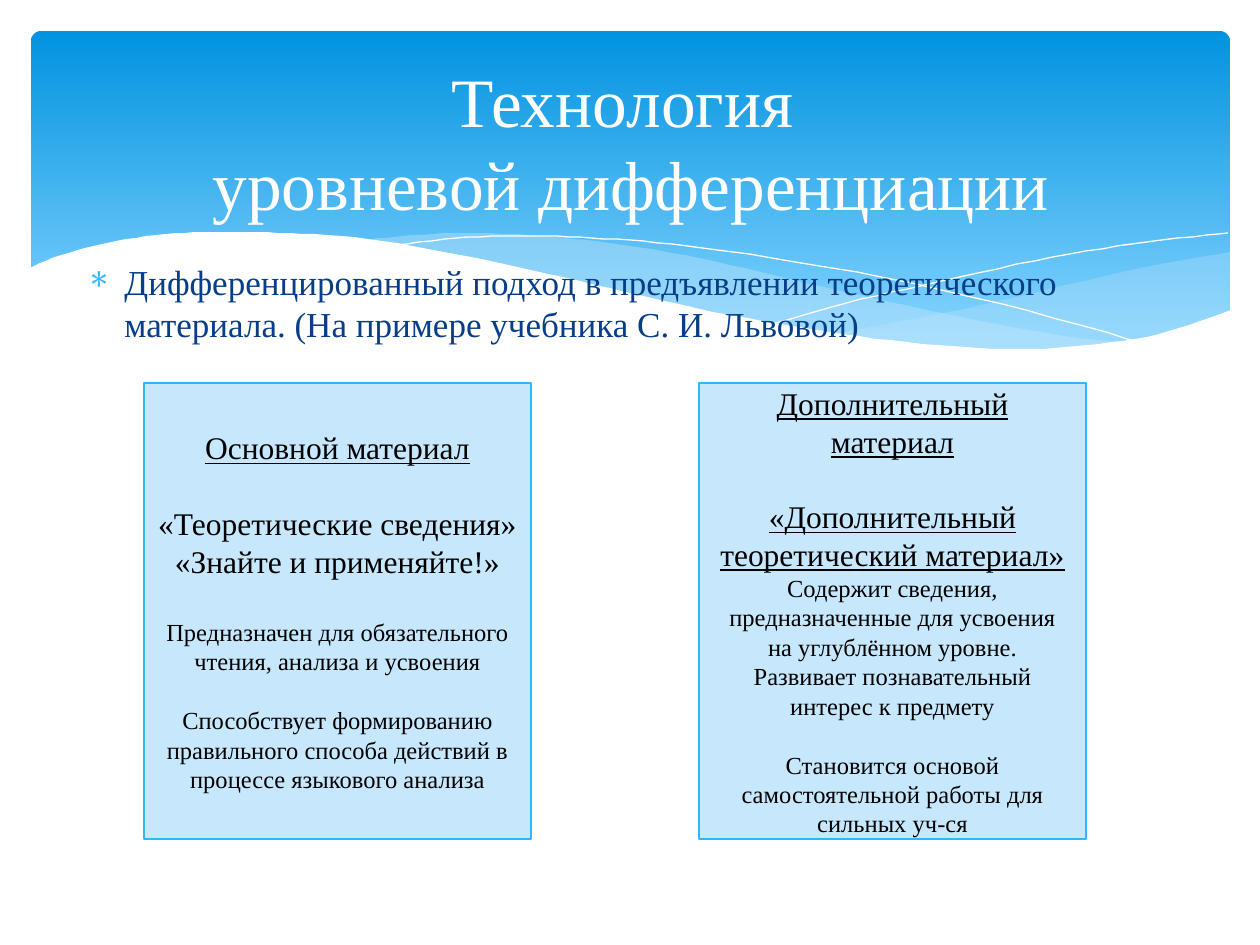
from dataclasses import dataclass

import lxml.etree
import pptx
import pptx.dml.color
import pptx.enum.shapes
import pptx.enum.text
import pptx.oxml.ns
import pptx.util

RGBColor = pptx.dml.color.RGBColor
Point = tuple[int, int]

EMU_PER_PX = 914400 / 126
FONT_NAME = "Times New Roman"
WHITE = RGBColor(0xFF, 0xFF, 0xFF)
BLACK = RGBColor(0x00, 0x00, 0x00)
NAVY = RGBColor(0x07, 0x3E, 0x87)
SKY = RGBColor(0x31, 0xB6, 0xFD)
PALE = RGBColor(0xC6, 0xE7, 0xFC)
BANNER_TOP = RGBColor(0x02, 0x93, 0xE0)
BANNER_BOTTOM = RGBColor(0x83, 0xD3, 0xFE)
HEADING_SIZE = 18
DETAIL_SIZE = 14
HEADING_GAP = 21.5
DETAIL_GAP = 16.8
CURVE_STEPS = 6


@dataclass(frozen=True)
class Box:
    left: int
    top: int
    width: int
    height: int

    def emu(self) -> list[int]:
        return [px(value) for value in (self.left, self.top, self.width, self.height)]


@dataclass(frozen=True)
class Line:
    text: str
    size: float
    underline: bool = False
    gap: float = 0


@dataclass(frozen=True)
class Card:
    box: Box
    lines: tuple[Line, ...]


@dataclass(frozen=True)
class Wave:
    edges: tuple[tuple[Point, ...], ...]
    fill: RGBColor | None = None
    opacity: int = 100


WAVES = (
    Wave((
        ((1230, 252), (1142, 268), (1085, 281), (981, 305), (889, 324), (833, 334)),
        ((833, 334), (922, 345), (1012, 350), (1099, 345), (1178, 330), (1230, 311)),
    ), PALE, 29),
    Wave((
        ((1125, 344), (1017, 328), (890, 302), (793, 280), (699, 258),
         (616, 244), (529, 235), (455, 233), (394, 237), (360, 241)),
        ((360, 241), (456, 256), (566, 280), (668, 302), (757, 321),
         (857, 338), (958, 348), (1044, 350), (1125, 344)),
    ), PALE, 40),
    Wave((
        ((389, 246), (457, 238), (525, 236), (591, 238), (672, 244),
         (766, 257), (876, 276), (1002, 304), (1143, 343)),
    )),
    Wave((
        ((772, 324), (847, 303), (942, 281), (1053, 257), (1147, 242), (1228, 233)),
    )),
    Wave((
        ((1231, 310), (1159, 334), (1087, 345), (1019, 349), (937, 345), (842, 334),
         (730, 315), (634, 294), (563, 277), (460, 255), (368, 239), (290, 233),
         (223, 232), (166, 234), (107, 243), (58, 256), (29, 268)),
        ((29, 415), (1231, 415)),
    ), WHITE),
)

CARDS = (
    Card(Box(144, 383, 387, 456), (
        Line("Основной материал", HEADING_SIZE, underline=True),
        Line("«Теоретические сведения»", HEADING_SIZE, gap=HEADING_GAP),
        Line("«Знайте и применяйте!»", HEADING_SIZE),
        Line("Предназначен для обязательного чтения, анализа и усвоения",
             DETAIL_SIZE, gap=HEADING_GAP),
        Line("Способствует формированию правильного способа действий в процессе "
             "языкового анализа", DETAIL_SIZE, gap=DETAIL_GAP),
    )),
    Card(Box(699, 383, 387, 456), (
        Line("Дополнительный материал", HEADING_SIZE, underline=True),
        Line("«Дополнительный теоретический материал»", HEADING_SIZE,
             underline=True, gap=HEADING_GAP),
        Line("Содержит сведения, предназначенные для усвоения", DETAIL_SIZE),
        Line("на углублённом уровне.", DETAIL_SIZE),
        Line("Развивает познавательный интерес к предмету", DETAIL_SIZE),
        Line("Становится основой самостоятельной работы для сильных уч-ся",
             DETAIL_SIZE, gap=DETAIL_GAP),
    )),
)


def px(value: float) -> int:
    return round(value * EMU_PER_PX)


def smooth_edge(knots: tuple[Point, ...]) -> list[tuple[float, float]]:
    padded = (knots[0], *knots, knots[-1])
    points = [knots[0]]
    for before, start, end, after in zip(padded, padded[1:], padded[2:], padded[3:]):
        for step in range(1, CURVE_STEPS + 1):
            t = step / CURVE_STEPS
            points.append(tuple(
                b + ((c - a) * t + (2 * a - 5 * b + 4 * c - d) * t**2
                     + (3 * b - a - 3 * c + d) * t**3) / 2
                for a, b, c, d in zip(before, start, end, after)
            ))
    return points


def draw_banner(slide, box: Box) -> None:
    shape = slide.shapes.add_shape(
        pptx.enum.shapes.MSO_SHAPE.ROUNDED_RECTANGLE, *box.emu())
    shape.shadow.inherit = False
    shape.adjustments[0] = 0.03
    shape.line.fill.background()
    shape.fill.gradient()
    shape.fill.gradient_angle = 270
    top, bottom = shape.fill.gradient_stops
    top.color.rgb, top.position = BANNER_TOP, 0
    bottom.color.rgb, bottom.position = BANNER_BOTTOM, 0.9


def draw_wave(slide, wave: Wave) -> None:
    points = [point for edge in wave.edges for point in smooth_edge(edge)]
    builder = slide.shapes.build_freeform(*points[0], scale=EMU_PER_PX)
    builder.add_line_segments(points[1:], close=wave.fill is not None)
    shape = builder.convert_to_shape()
    shape.shadow.inherit = False
    if wave.fill is None:
        shape.fill.background()
        shape.line.color.rgb = WHITE
        shape.line.width = pptx.util.Pt(0)
        return
    shape.line.fill.background()
    shape.fill.solid()
    shape.fill.fore_color.rgb = wave.fill
    if wave.opacity < 100:
        color = shape.fill._xPr.find(".//" + pptx.oxml.ns.qn("a:srgbClr"))
        lxml.etree.SubElement(
            color, pptx.oxml.ns.qn("a:alpha"), val=str(wave.opacity * 1000))


def set_line(paragraph, line: Line, color: RGBColor, centred: bool = True) -> None:
    paragraph.text = line.text
    if centred:
        paragraph.alignment = pptx.enum.text.PP_ALIGN.CENTER
    if line.gap:
        paragraph.space_before = pptx.util.Pt(line.gap)
    paragraph.font.name = FONT_NAME
    paragraph.font.size = pptx.util.Pt(line.size)
    paragraph.font.color.rgb = color
    if line.underline:
        paragraph.font.underline = True


def add_text_frame(slide, box: Box):
    frame = slide.shapes.add_textbox(*box.emu()).text_frame
    frame.word_wrap = True
    return frame


def add_bullet(paragraph, character: str, color: RGBColor, indent: int) -> None:
    properties = paragraph._p.get_or_add_pPr()
    properties.set("marL", str(px(indent)))
    properties.set("indent", str(-px(indent)))
    bullet_color = lxml.etree.SubElement(properties, pptx.oxml.ns.qn("a:buClr"))
    lxml.etree.SubElement(bullet_color, pptx.oxml.ns.qn("a:srgbClr"), val=str(color))
    lxml.etree.SubElement(properties, pptx.oxml.ns.qn("a:buChar"), char=character)


def draw_card(slide, card: Card) -> None:
    shape = slide.shapes.add_shape(
        pptx.enum.shapes.MSO_SHAPE.RECTANGLE, *card.box.emu())
    shape.shadow.inherit = False
    shape.fill.solid()
    shape.fill.fore_color.rgb = PALE
    shape.line.color.rgb = SKY
    shape.line.width = pptx.util.Pt(1.25)
    frame = shape.text_frame
    frame.word_wrap = True
    frame.vertical_anchor = pptx.enum.text.MSO_ANCHOR.MIDDLE
    for index, line in enumerate(card.lines):
        paragraph = frame.add_paragraph() if index else frame.paragraphs[0]
        set_line(paragraph, line, BLACK)


def main() -> None:
    presentation = pptx.Presentation()
    presentation.slide_width, presentation.slide_height = px(1260), px(945)
    slide = presentation.slides.add_slide(presentation.slide_layouts[6])
    draw_banner(slide, Box(31, 31, 1199, 340))
    for wave in WAVES:
        draw_wave(slide, wave)
    body = add_text_frame(slide, Box(74, 254, 1101, 590)).paragraphs[0]
    add_bullet(body, "∗", SKY, 38)
    set_line(body, Line("Дифференцированный подход в предъявлении теоретического "
                        "материала. (На примере учебника С. И. Львовой)", 20),
             NAVY, centred=False)
    title = add_text_frame(slide, Box(64, 55, 1134, 173))
    title.vertical_anchor = pptx.enum.text.MSO_ANCHOR.MIDDLE
    set_line(title.paragraphs[0],
             Line("Технология \vуровневой дифференциации", 39.6), WHITE)
    for card in CARDS:
        draw_card(slide, card)
    presentation.save("out.pptx")


if __name__ == "__main__":
    main()
